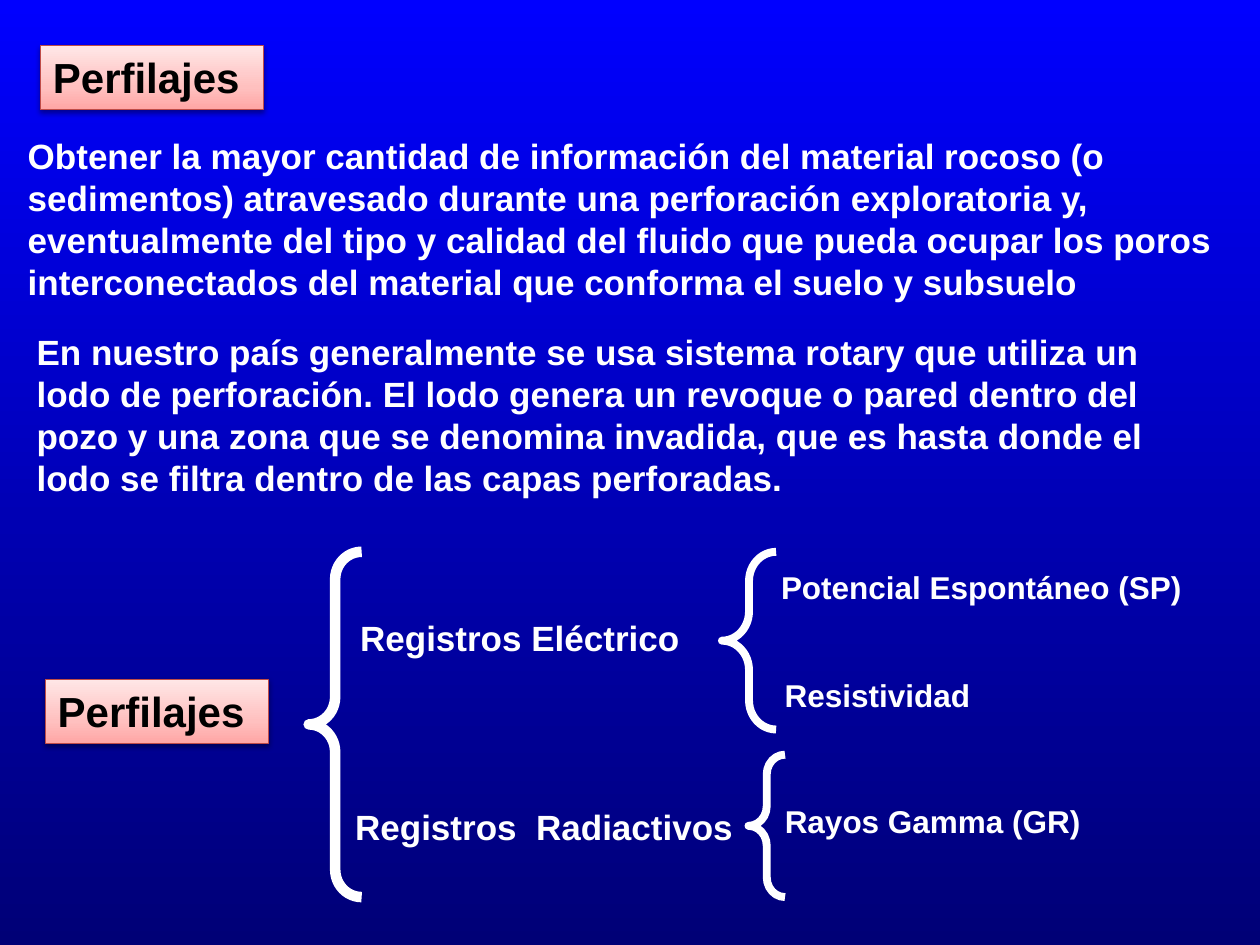
from copy import deepcopy

from lxml.etree import SubElement
from pptx import Presentation
from pptx.dml.color import RGBColor
from pptx.enum.shapes import MSO_SHAPE as Shape
from pptx.enum.text import MSO_ANCHOR as Anchor, MSO_AUTO_SIZE as AutoSize, PP_ALIGN as Align
from pptx.oxml.ns import qn
from pptx.util import Inches, Pt

THEME = {
    "font": "Arial",
    "text": "FFFFFF",
    "box_text": "000000",
    "box_line": "BF4C48",
    "shadow": "000000",
    "background": [(0, "0000FF"), (1, "000076")],
    "box": [(0, "FFA6A5"), (0.35, "FFC0BF"), (1, "FFE7E7")],
    "heading_size": 24,
    "body_size": 20,
    "leaf_size": 18,
}

# Content: positions are left, top, width, height in inches
BOX_SIZE = (1.77, 0.51)
HEADING = "Perfilajes"
TITLE_AT = (0.32, 0.36, *BOX_SIZE)
ROOT_AT = (0.36, 5.39, *BOX_SIZE)
PARAGRAPHS = [
    ("Obtener la mayor cantidad de información del material rocoso (o sedimentos) "
     "atravesado durante una perforación exploratoria y, eventualmente del tipo y "
     "calidad del fluido que pueda ocupar los poros interconectados del material "
     "que conforma el suelo y subsuelo", (0.12, 1.02, 9.99, 1.45)),
    ("En nuestro país generalmente se usa sistema rotary que utiliza un lodo de "
     "perforación. El lodo genera un revoque o pared dentro del pozo y una zona que "
     "se denomina invadida, que es hasta donde el lodo se filtra dentro de las "
     "capas perforadas.", (0.19, 2.57, 9.61, 1.45)),
]
LABELS = [
    ("Registros Eléctrico", "body_size", (2.76, 4.84, 2.76, 0.44)),
    ("Potencial Espontáneo (SP)", "leaf_size", (6.1, 4.46, 3.55, 0.4)),
    ("Resistividad", "leaf_size", (6.13, 5.32, 1.83, 0.4)),
    ("Registros  Radiactivos", "body_size", (2.72, 6.34, 3.22, 0.44)),
    ("Rayos Gamma (GR)", "leaf_size", (6.13, 6.32, 2.61, 0.4)),
]
BRACES = [  # position, curve, line width
    ((2.45, 4.38, 0.42, 2.74), 0.52, 6),
    ((5.73, 4.38, 0.43, 1.41), 0.54, 4.5),
    ((5.94, 5.99, 0.29, 1.13), 0.54, 4.5),
]


def color(name):
    return RGBColor.from_string(THEME[name])


def place(shape, position):
    for name, value in zip(("left", "top", "width", "height"), position):
        setattr(shape, name, Inches(value))


def paint_gradient(fill, element, stops, angle):
    fill.gradient()
    fill.gradient_angle = angle
    stop_list = element.xpath(".//a:gsLst")[0]
    while len(stop_list) < len(stops):
        stop_list.append(deepcopy(stop_list[-1]))
    for stop, (position, rgb) in zip(fill.gradient_stops, stops):
        stop.position = position
        stop.color.rgb = RGBColor.from_string(rgb)


def write(shape, text, size, text_color="text", wrap=True):
    frame = shape.text_frame
    frame_format = {"text": text, "word_wrap": wrap, "auto_size": AutoSize.NONE,
                    "vertical_anchor": Anchor.TOP}
    for name, value in frame_format.items():
        setattr(frame, name, value)
    paragraph = frame.paragraphs[0]
    for name, value in {"alignment": Align.LEFT, "space_before": Pt(0),
                        "line_spacing": 1.0}.items():
        setattr(paragraph, name, value)
    font = paragraph.runs[0].font
    for name, value in {"name": THEME["font"], "size": Pt(THEME[size]), "bold": True}.items():
        setattr(font, name, value)
    font.color.rgb = color(text_color)
    return paragraph


def style_box(shape):
    paint_gradient(shape.fill, shape._element, THEME["box"], 90)
    shape.line.color.rgb = color("box_line")
    shape.line.width = Pt(0.75)
    shape.shadow.inherit = False
    effects = shape._element.spPr.find(qn("a:effectLst"))
    shadow = SubElement(effects, qn("a:outerShdw"), blurRad=str(Pt(3.1)), dist=str(Pt(1.6)),
                        dir="5400000", rotWithShape="0")
    shade = SubElement(shadow, qn("a:srgbClr"), val=THEME["shadow"])
    SubElement(shade, qn("a:alpha"), val="38000")
    write(shape, HEADING, "heading_size", "box_text")


# Slide with title and two text bodies
presentation = Presentation()
presentation.slide_width, presentation.slide_height = Inches(10), Inches(7.5)
slide = presentation.slides.add_slide(presentation.slide_layouts[3])
paint_gradient(slide.background.fill, slide._element, THEME["background"], 270)
title, *bodies = list(slide.placeholders)[:3]

# Heading boxes
place(title, TITLE_AT)
root = slide.shapes.add_shape(Shape.RECTANGLE, *map(Inches, ROOT_AT))
for box in (title, root):
    style_box(box)

# Explanatory paragraphs without bullets
for body, (text, position) in zip(bodies, PARAGRAPHS):
    place(body, position)
    properties = write(body, text, "body_size")._p.get_or_add_pPr()
    properties.set("marL", "0")
    properties.set("indent", "0")
    SubElement(properties, qn("a:buNone"))

# Classification tree: braces and labels
for position, curve, width in BRACES:
    brace = slide.shapes.add_shape(Shape.LEFT_BRACE, *map(Inches, position))
    brace.adjustments[0] = curve
    brace.fill.background()
    brace.line.color.rgb = color("text")
    brace.line.width = Pt(width)
    brace.shadow.inherit = False
for text, size, position in LABELS:
    write(slide.shapes.add_textbox(*map(Inches, position)), text, size, wrap=False)

presentation.save("out.pptx")
